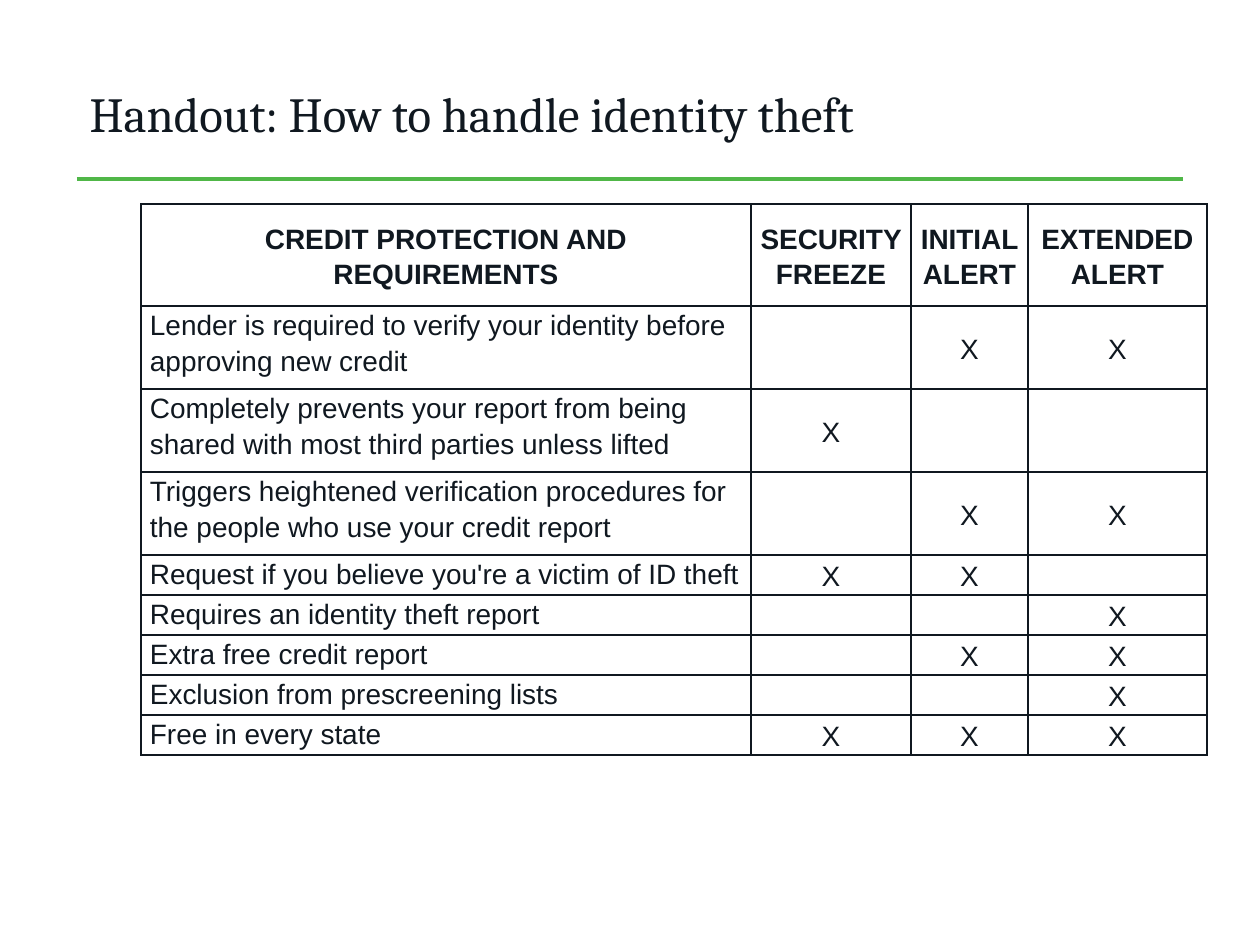
from lxml import etree
from pptx import Presentation
from pptx.dml.color import RGBColor
from pptx.enum.shapes import MSO_CONNECTOR
from pptx.enum.text import MSO_ANCHOR, MSO_AUTO_SIZE, PP_ALIGN
from pptx.oxml import parse_xml
from pptx.oxml.ns import nsdecls, qn
from pptx.util import Pt

PX = 914400 // 126
INK = "101820"
GREEN = "50B748"


def rgb(color):
    return RGBColor.from_string(color)


def add_borders(cell):
    """Draw a 1 pt line on all four sides of a cell."""
    tc_pr = cell._tc.get_or_add_tcPr()
    for i, side in enumerate(("lnL", "lnR", "lnT", "lnB")):
        tc_pr.insert(i, parse_xml(
            f'<a:{side} {nsdecls("a")} w="{Pt(1)}"><a:solidFill>'
            f'<a:srgbClr val="{INK}"/></a:solidFill></a:{side}>'))


prs = Presentation()
prs.slide_width, prs.slide_height = 1260 * PX, 945 * PX
s = prs.slides.add_slide(prs.slide_layouts[5])

# Green rule under the title
rule = s.shapes.add_connector(
    MSO_CONNECTOR.STRAIGHT, 77 * PX, 179 * PX, 1183 * PX, 179 * PX)
rule.line.color.rgb = rgb(GREEN)
rule.line.width = Pt(2)
etree.SubElement(rule._element.spPr, qn("a:effectLst"))

# Title
title = s.shapes.title
title.left, title.top, title.width, title.height = (
    v * PX for v in (77, 62, 1107, 102))
tf = title.text_frame
tf.word_wrap = True
tf.auto_size = MSO_AUTO_SIZE.NONE
tf.vertical_anchor = MSO_ANCHOR.MIDDLE
p = tf.paragraphs[0]
p.alignment = PP_ALIGN.LEFT
r = p.add_run()
r.text = "Handout: How to handle identity theft"
r.font.name, r.font.size = "Cambria", Pt(28)
r.font.color.rgb = rgb(INK)

# Comparison table
rows = [
    ("CREDIT PROTECTION AND REQUIREMENTS",
     "SECURITY FREEZE", "INITIAL ALERT", "EXTENDED ALERT"),
    ("Lender is required to verify your identity before approving new credit",
     "", "X", "X"),
    ("Completely prevents your report from being shared with most third "
     "parties unless lifted", "X", "", ""),
    ("Triggers heightened verification procedures for the people who use "
     "your credit report", "", "X", "X"),
    ("Request if you believe you're a victim of ID theft", "X", "X", ""),
    ("Requires an identity theft report", "", "", "X"),
    ("Extra free credit report", "", "X", "X"),
    ("Exclusion from prescreening lists", "", "", "X"),
    ("Free in every state", "X", "X", "X"),
]
col_widths = [610, 160, 117, 179]
row_heights = [102] + [83] * 3 + [40] * 5

table = s.shapes.add_table(
    len(rows), len(col_widths), 141 * PX, 204 * PX,
    sum(col_widths) * PX, sum(row_heights) * PX).table
table.first_row = table.horz_banding = False
for col, width in zip(table.columns, col_widths):
    col.width = width * PX
for row, height in zip(table.rows, row_heights):
    row.height = height * PX

for i, texts in enumerate(rows):
    for j, text in enumerate(texts):
        header, centered = i == 0, i == 0 or j > 0
        cell = table.cell(i, j)
        cell.fill.background()
        add_borders(cell)
        cell.margin_left = cell.margin_right = 9 * PX
        cell.margin_top = cell.margin_bottom = 0
        cell.vertical_anchor = MSO_ANCHOR.MIDDLE if centered else MSO_ANCHOR.TOP
        if not text:
            continue
        p = cell.text_frame.paragraphs[0]
        p.alignment = PP_ALIGN.CENTER if centered else PP_ALIGN.LEFT
        p.line_spacing = 1.15
        p.space_after = Pt(4 if header else 9)
        r = p.add_run()
        r.text = text
        r.font.name, r.font.size, r.font.bold = "Arial", Pt(16), header
        r.font.color.rgb = rgb(INK)

prs.save("out.pptx")
